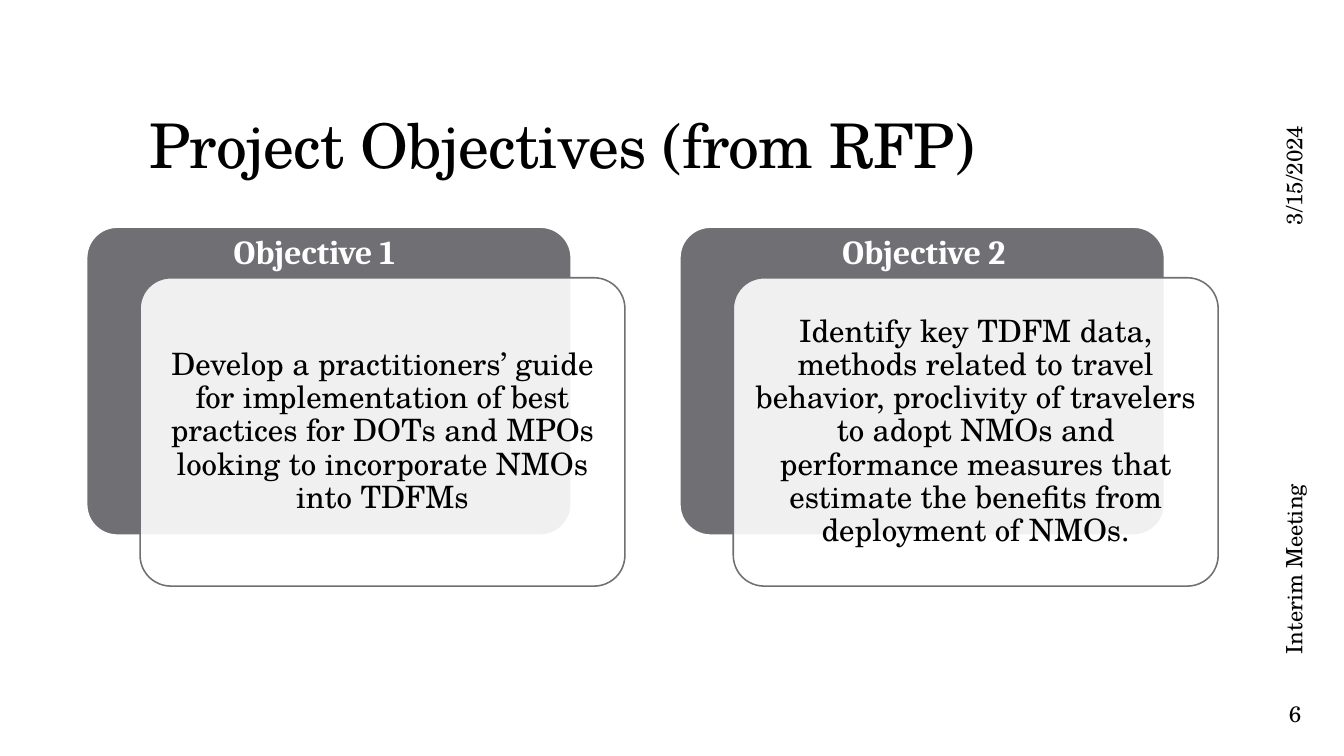
from pptx import Presentation
from pptx.dml.color import RGBColor
from pptx.enum.shapes import MSO_SHAPE as Shape
from pptx.enum.text import MSO_ANCHOR as Anchor, PP_ALIGN as Align
from pptx.oxml.ns import qn
from pptx.util import Cm, Pt
from lxml.etree import SubElement

SERIF = "TeX Gyre Schola"
BLACK, WHITE, GRAY = "000000", "FFFFFF", "6F6F74"
CARD_LEFT, CARD_TOP, CARD_STEP = 2.18, 5.72, 14.95
CARD_SIZE = (12.22, 7.77)
FRONT_SHIFT = (1.35, 1.28)
OBJECTIVES = [
    ("Objective 1", 5.64,
     "Develop a practitioners’ guide for implementation of best practices "
     "for DOTs and MPOs looking to incorporate NMOs into TDFMs"),
    ("Objective 2", 20.98,
     "Identify key TDFM data, methods related to travel behavior, proclivity "
     "of travelers to adopt NMOs and performance measures that estimate the "
     "benefits from deployment of NMOs."),
]


def color(value):
    return RGBColor.from_string(value)


def set_values(target, values):
    for name, value in values.items():
        setattr(target, name, value)


def write_text(shape, text, size, font=SERIF, font_color=BLACK, bold=False,
               anchor=Anchor.TOP, align=Align.LEFT, line_spacing=1.0,
               inset=(0.25, 0.13), tracking=None):
    frame = shape.text_frame
    across, down = (Cm(value) for value in inset)
    set_values(frame, {
        "word_wrap": True, "vertical_anchor": anchor,
        "margin_left": across, "margin_right": across,
        "margin_top": down, "margin_bottom": down,
    })
    paragraph = frame.paragraphs[0]
    set_values(paragraph, {"alignment": align, "line_spacing": line_spacing})
    run = paragraph.add_run()
    run.text = text
    set_values(run.font, {"name": font, "size": Pt(size), "bold": bold})
    run.font.color.rgb = color(font_color)
    if tracking:
        run.font._element.set("spc", str(tracking))


def add_text(slide, box, text, size, rotation=0, **style):
    shape = slide.shapes.add_textbox(*map(Cm, box))
    shape.rotation = rotation
    write_text(shape, text, size, **style)


def add_panel(slide, left, top, fill, line, line_width, opacity=100):
    shape = slide.shapes.add_shape(
        Shape.ROUNDED_RECTANGLE, *map(Cm, (left, top, *CARD_SIZE)))
    shape.adjustments[0] = 0.1
    shape.shadow.inherit = False
    shape.fill.solid()
    shape.fill.fore_color.rgb = color(fill)
    shape.line.color.rgb = color(line)
    shape.line.width = Pt(line_width)
    if opacity < 100:
        fill_color = shape._element.spPr.find(qn("a:solidFill"))[0]
        SubElement(fill_color, qn("a:alpha"), val=str(opacity * 1000))
    return shape


def add_objective(slide, left, heading, heading_left, body):
    add_panel(slide, left, CARD_TOP, GRAY, WHITE, 1.35)
    front = add_panel(slide, left + FRONT_SHIFT[0], CARD_TOP + FRONT_SHIFT[1],
                      WHITE, GRAY, 1.1, opacity=90)
    write_text(front, body, 22, anchor=Anchor.MIDDLE, align=Align.CENTER,
               line_spacing=0.9, inset=(0.23, 0.23))
    add_text(slide, (heading_left, 5.69, 7, 1.27), heading, 24,
             font="Cambria", font_color=WHITE, bold=True)


def main():
    presentation = Presentation()
    set_values(presentation, {"slide_width": Cm(33.87), "slide_height": Cm(19.05)})
    slide = presentation.slides.add_slide(presentation.slide_layouts[6])
    add_text(slide, (3.51, 1.02, 26.92, 4.7 - 1.02), "Project Objectives (from RFP)",
             44, anchor=Anchor.BOTTOM, line_spacing=0.9, tracking=-50)
    for index, objective in enumerate(OBJECTIVES):
        add_objective(slide, CARD_LEFT + index * CARD_STEP, *objective)
    add_text(slide, (30, 2.77, 5.28, 1.02), "3/15/2024", 16, rotation=270)
    add_text(slide, (27.66, 11.25, 9.96, 1.02), "Interim Meeting", 16, rotation=270)
    add_text(slide, (31.37, 17.15, 2.54, 1.65), "6", 16, anchor=Anchor.MIDDLE,
             align=Align.CENTER, inset=(0.13, 0.13))
    presentation.save("out.pptx")


if __name__ == "__main__":
    main()
